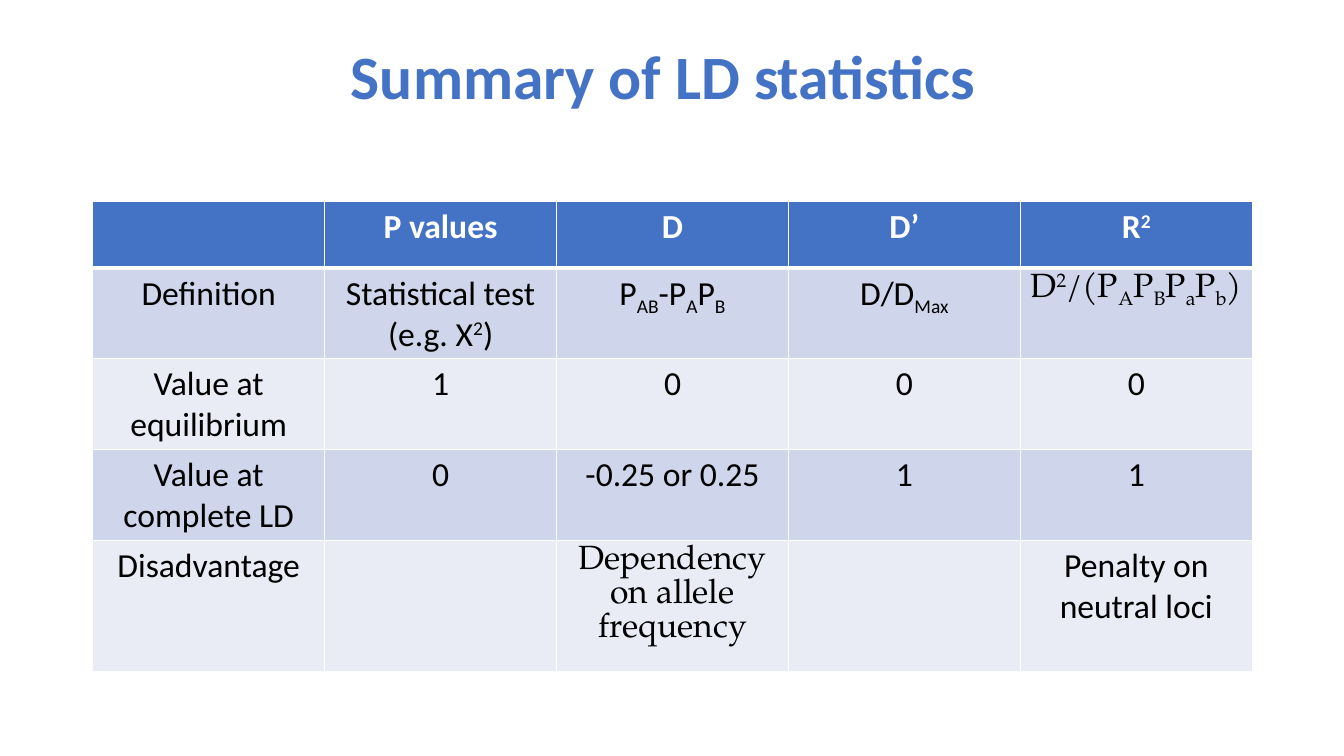
from pptx import Presentation
from pptx.dml.color import RGBColor
from pptx.enum.text import MSO_ANCHOR, PP_ALIGN
from pptx.oxml import parse_xml
from pptx.oxml.ns import nsdecls
from pptx.util import Inches, Pt

BLUE, WHITE, BLACK = "4472C4", "FFFFFF", "000000"
BANDS = ("CFD5EA", "E9EBF5")
SANS, SERIF = "Calibri", "TeX Gyre Pagella"
BASELINES = {"^": "30000", "_": "-25000"}

# ^{...} is superscript and _{...} is subscript
STATISTICS = [
    ["", "P values", "D", "D’", "R^{2}"],
    ["Definition", "Statistical test (e.g. X^{2})", "P_{AB}-P_{A}P_{B}",
     "D/D_{Max}", "D^{2}/(P_{A}P_{B}P_{a}P_{b})"],
    ["Value at equilibrium", "1", "0", "0", "0"],
    ["Value at complete LD", "0", "-0.25 or 0.25", "1", "1"],
    ["Disadvantage", "", "Dependency on allele frequency", "",
     "Penalty on neutral loci"],
]
SERIF_CELLS = {(1, 4), (4, 2)}
ROW_HEIGHTS = [0.66] * 4 + [1.14]
COLUMN_WIDTH = 2.3


def rgb(color):
    return RGBColor.from_string(color)


def split_scripts(text):
    """Yield (text, baseline) pieces of marked-up text."""
    baseline = None
    for piece in text.replace("}", "{").split("{"):
        following = BASELINES.get(piece[-1:])
        plain = piece[:-1] if following else piece
        if plain:
            yield plain, baseline
        baseline = following


class SlideBuilder:
    def __init__(self, slide):
        self.slide = slide

    def add_text(self, frame, text, size, color, bold=False, font=SANS):
        paragraph = frame.paragraphs[0]
        paragraph.alignment = PP_ALIGN.CENTER
        for piece, baseline in split_scripts(text):
            run = paragraph.add_run()
            run.text = piece
            run.font.size = Pt(size)
            run.font.name = font
            run.font.bold = bold
            run.font.color.rgb = rgb(color)
            if baseline:
                run._r.get_or_add_rPr().set("baseline", baseline)
        return paragraph

    def title(self, text, left, top, width, height):
        box = self.slide.shapes.add_textbox(
            Inches(left), Inches(top), Inches(width), Inches(height))
        frame = box.text_frame
        frame.word_wrap = True
        frame.vertical_anchor = MSO_ANCHOR.MIDDLE
        self.add_text(frame, text, 44, BLUE, bold=True).line_spacing = 0.9

    def borders(self, cell, top, bottom):
        """Draw white edges, one point wide at the sides."""
        widths = {"L": 1, "R": 1, "T": top, "B": bottom}
        properties = cell._tc.get_or_add_tcPr()
        for index, (side, width) in enumerate(widths.items()):
            properties.insert(index, parse_xml(
                f'<a:ln{side} {nsdecls("a")} w="{Pt(width)}"><a:solidFill>'
                f'<a:srgbClr val="{WHITE}"/></a:solidFill></a:ln{side}>'))

    def table(self, rows, left, top, height):
        columns = len(rows[0])
        graphic = self.slide.shapes.add_table(
            len(rows), columns, Inches(left), Inches(top),
            Inches(COLUMN_WIDTH * columns), Inches(height))
        table = graphic.table
        for column in table.columns:
            column.width = Inches(COLUMN_WIDTH)
        for row, row_height in zip(table.rows, ROW_HEIGHTS):
            row.height = Inches(row_height)
        graphic.height = Inches(height)
        for r, texts in enumerate(rows):
            header = r == 0
            for c, text in enumerate(texts):
                cell = table.cell(r, c)
                cell.fill.solid()
                cell.fill.fore_color.rgb = rgb(BLUE if header else BANDS[(r - 1) % 2])
                self.borders(cell, 3 if r == 1 else 1, 3 if header else 1)
                self.add_text(cell.text_frame, text, 24, WHITE if header else BLACK,
                              header, SERIF if (r, c) in SERIF_CELLS else SANS)


def main():
    presentation = Presentation()
    presentation.slide_width = Inches(13.33)
    presentation.slide_height = Inches(7.5)
    builder = SlideBuilder(
        presentation.slides.add_slide(presentation.slide_layouts[6]))
    builder.title("Summary of LD statistics", 2.08, 0, 9, 1.58)
    builder.table(STATISTICS, 0.92, 2, 4.66)
    presentation.save("out.pptx")


if __name__ == "__main__":
    main()
